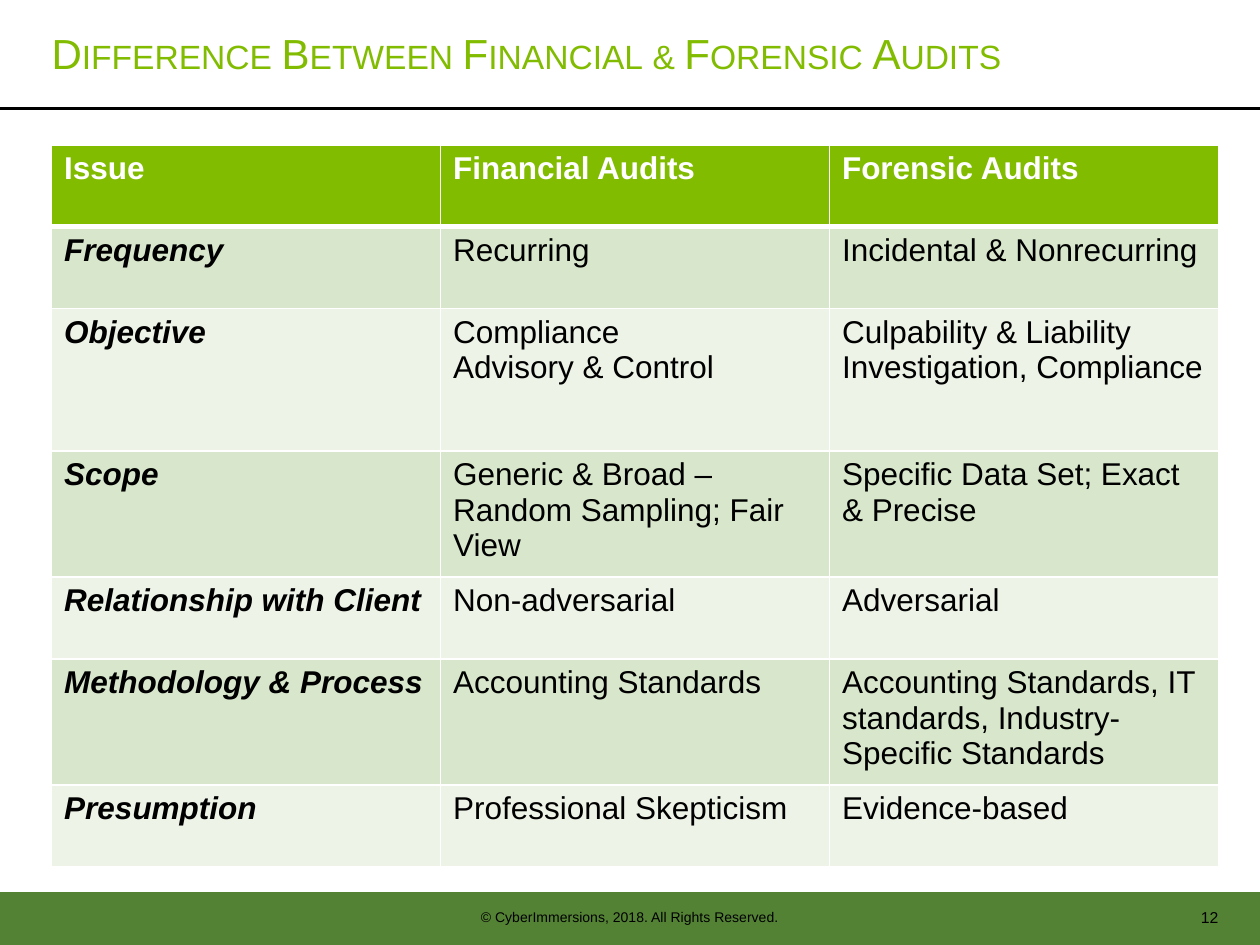
from pptx import Presentation
from pptx.dml.color import RGBColor
from pptx.enum.shapes import MSO_CONNECTOR, MSO_SHAPE
from pptx.enum.text import MSO_ANCHOR, PP_ALIGN
from pptx.oxml import parse_xml
from pptx.oxml.ns import nsdecls
from pptx.util import Inches, Pt

STRAIGHT = MSO_CONNECTOR.STRAIGHT
RECTANGLE = MSO_SHAPE.RECTANGLE
TOP, MIDDLE = MSO_ANCHOR.TOP, MSO_ANCHOR.MIDDLE
LEFT, CENTER, RIGHT = PP_ALIGN.LEFT, PP_ALIGN.CENTER, PP_ALIGN.RIGHT
GREEN, BLACK, WHITE = "81BC00", "000000", "FFFFFF"
BANDS = ["D8E7CC", "EDF3E7"]


def color(value):
    return RGBColor.from_string(value)


def style(paragraph, size, value, bold=False, italic=False):
    font = paragraph.font
    font.name = "Arial"
    font.size = Pt(size)
    font.bold = bold
    font.italic = italic
    font.color.rgb = color(value)


deck = Presentation()
deck.slide_width, deck.slide_height = Inches(10), Inches(7.5)
slide = deck.slides.add_slide(deck.slide_layouts[6])

footer = slide.shapes.add_shape(RECTANGLE, 0, Inches(7.08), Inches(10), Inches(0.42))
footer.shadow.inherit = False
footer.fill.solid()
footer.fill.fore_color.rgb = color("548235")
footer.line.fill.background()

rule = slide.shapes.add_connector(STRAIGHT, 0, Inches(0.86), Inches(10), Inches(0.86))
rule.line.color.rgb = color(BLACK)
rule.line.width = Pt(1.5)
rule._element.spPr.append(parse_xml(f"<a:effectLst {nsdecls('a')}/>"))

labels = [
    ("Difference Between Financial & Forensic Audits",
     (0.41, 0.22, 7.94, 0.51), 24, GREEN, LEFT, TOP, 0),
    ("© CyberImmersions, 2018. All Rights Reserved.",
     (3.62, 7.16, 2.76, 0.24), 8, BLACK, CENTER, TOP, 0.05),
    ("12", (8.8, 7.14, 0.87, 0.28), 9, BLACK, RIGHT, MIDDLE, 0),
]
for words, place, size, ink, align, anchor, inset in labels:
    label = slide.shapes.add_textbox(*map(Inches, place))
    frame = label.text_frame
    frame.word_wrap = True
    frame.vertical_anchor = anchor
    frame.margin_left = frame.margin_right = Inches(inset)
    frame.margin_top = frame.margin_bottom = Inches(inset)
    paragraph = frame.paragraphs[0]
    paragraph.text = words
    paragraph.alignment = align
    style(paragraph, size, ink)
    if ink == GREEN:
        paragraph.runs[0]._r.get_or_add_rPr().set("cap", "small")

issues = [
    ("Issue", "Financial Audits", "Forensic Audits"),
    ("Frequency", "Recurring", "Incidental & Nonrecurring"),
    ("Objective", "Compliance\nAdvisory & Control",
     "Culpability & Liability\nInvestigation, Compliance"),
    ("Scope", "Generic & Broad – Random Sampling; Fair View",
     "Specific Data Set; Exact & Precise"),
    ("Relationship with Client", "Non-adversarial", "Adversarial"),
    ("Methodology & Process", "Accounting Standards",
     "Accounting Standards, IT standards, Industry-Specific Standards"),
    ("Presumption", "Professional Skepticism", "Evidence-based"),
]
audits = slide.shapes.add_table(
    len(issues), 3, Inches(0.41), Inches(1.15), Inches(9.26), Inches(5.03)).table
for column in audits.columns:
    column.width = Inches(9.26 / 3)

for r, entries in enumerate(issues):
    audits.rows[r].height = Inches(1.13 if entries[0] == "Objective" else 0.65)
    header = r == 0
    for c, entry in enumerate(entries):
        cell = audits.cell(r, c)
        cell.text = entry
        for paragraph in cell.text_frame.paragraphs:
            style(paragraph, 18, WHITE if header else BLACK,
                  bold=header or c == 0, italic=c == 0 and not header)
        borders = cell._tc.get_or_add_tcPr()
        for side in "LRTB":
            thick = (header and side == "B") or (r == 1 and side == "T")
            borders.append(parse_xml(
                f'<a:ln{side} {nsdecls("a")} w="{Pt(3 if thick else 1)}"><a:solidFill>'
                f'<a:srgbClr val="{WHITE}"/></a:solidFill></a:ln{side}>'))
        cell.fill.solid()
        cell.fill.fore_color.rgb = color(GREEN if header else BANDS[(r - 1) % 2])

deck.save("out.pptx")
